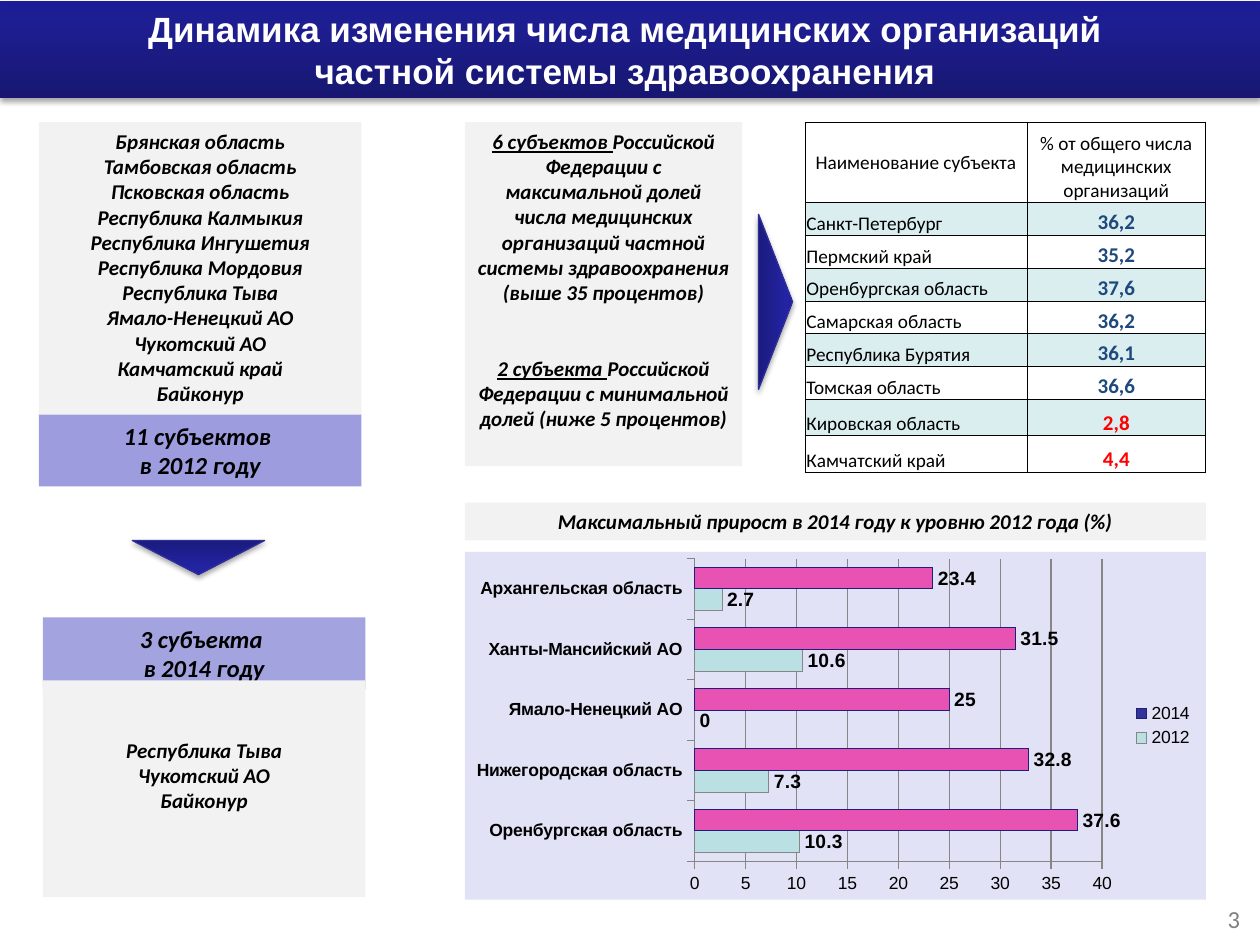
from copy import deepcopy
from pptx import Presentation
from pptx.chart.data import CategoryChartData
from pptx.dml.color import RGBColor
from pptx.enum.chart import XL_CHART_TYPE, XL_LABEL_POSITION, XL_LEGEND_POSITION, XL_TICK_MARK
from pptx.enum.shapes import MSO_SHAPE
from pptx.enum.text import MSO_ANCHOR, PP_ALIGN
from pptx.oxml import parse_xml
from pptx.oxml.ns import nsdecls, qn
from pptx.util import Inches, Pt

THEME = {
    "black": "000000", "white": "FFFFFF", "gray": "F2F2F2", "muted": "808080",
    "lilac": "9C9CDF", "light": "A3A3E0", "band": "DAEDEF", "blue": "1F497D",
    "red": "FF0000", "edge": "2F2F98", "plot": "E2E2F6", "grid": "868686",
    "teal": "BBE0E3", "navy": "333399", "pink": "E852B2", "rim": "1F1F7A",
    "bar": ("171771", "1E1E93", "1C1C96"), "arrow": ("1B1B7E", "2323A3", "2020A6"),
    "title": Pt(20), "head": Pt(14), "body": Pt(12), "cell": Pt(11), "axis": Pt(10),
}
RGB = {key: RGBColor.from_string(val) for key, val in THEME.items() if isinstance(val, str)}


def write(frame, lines, size, color="black", align=PP_ALIGN.CENTER, **style):
    look = {"name": "Calibri", "size": THEME[size], **style}
    frame.word_wrap = True
    for i, line in enumerate(lines):
        par = frame.add_paragraph() if i else frame.paragraphs[0]
        par.alignment = align
        lead, _, rest = line.rpartition("|")
        par.text = lead or rest
        if lead:
            par.runs[0].font.underline = True
            par.add_run().text = rest
        for run in par.runs:
            for key, val in look.items():
                setattr(run.font, key, val)
            run.font.color.rgb = RGB[color]
        for gap in par._p.findall(qn("a:br")):
            gap.append(deepcopy(par.runs[0].font._element))


def block(kind, x, y, w, h, fill, turn=0):
    shape = slide.shapes.add_shape(kind, Inches(x), Inches(y), Inches(w), Inches(h))
    shape.rotation = turn
    shape.shadow.inherit = False
    shape.line.fill.background()
    shape.text_frame.vertical_anchor = MSO_ANCHOR.TOP
    if fill in RGB:
        shape.fill.solid()
        shape.fill.fore_color.rgb = RGB[fill]
        return shape
    stops = "".join(
        f'<a:gs pos="{pos}"><a:srgbClr val="{tone}"/></a:gs>'
        for pos, tone in zip((0, 80000, 100000), THEME[fill]))
    props = shape._element.spPr
    props.find(qn("a:prstGeom")).addnext(parse_xml(
        f'<a:gradFill {nsdecls("a")} rotWithShape="1"><a:gsLst>{stops}</a:gsLst>'
        '<a:lin ang="16200000" scaled="0"/></a:gradFill>'))
    props.find(qn("a:effectLst")).append(parse_xml(
        f'<a:outerShdw {nsdecls("a")} blurRad="39370" dist="22860" dir="5400000" rotWithShape="0">'
        '<a:srgbClr val="000000"><a:alpha val="35000"/></a:srgbClr></a:outerShdw>'))
    return shape


deck = Presentation()
deck.slide_width, deck.slide_height = Inches(10), Inches(7.5)
slide = deck.slides.add_slide(deck.slide_layouts[6])

page = slide.shapes.add_textbox(Inches(7.61), Inches(7.09), Inches(2.33), Inches(0.4))
page.text_frame.vertical_anchor = MSO_ANCHOR.MIDDLE
write(page.text_frame, ["3"], "head", "muted", PP_ALIGN.RIGHT)

title = block(MSO_SHAPE.RECTANGLE, 0, 0.01, 10, 0.77, "bar")
title.text_frame.vertical_anchor = MSO_ANCHOR.MIDDLE
write(title.text_frame,
      ["Динамика изменения числа медицинских организаций \vчастной системы здравоохранения "],
      "title", "white", name="Arial", bold=True)

rows = [
    ("Наименование субъекта", "% от общего числа медицинских организаций"),
    ("Санкт-Петербург", "36,2"), ("Пермский край", "35,2"),
    ("Оренбургская область", "37,6"), ("Самарская область", "36,2"),
    ("Республика Бурятия", "36,1"), ("Томская область", "36,6"),
    ("Кировская область", "2,8"), ("Камчатский край", "4,4"),
]
table = slide.shapes.add_table(len(rows), 2, Inches(6.39), Inches(0.97),
                               Inches(3.18), Inches(2.76)).table
for col, width in zip(table.columns, (1.76, 1.42)):
    col.width = Inches(width)
inset = {"margin_left": Inches(0.01), "margin_right": Inches(0.01),
         "margin_top": Inches(0.01), "margin_bottom": 0}
for r, row in enumerate(rows):
    table.rows[r].height = Inches(0.64 if r == 0 else 0.26 if r < 7 else 0.29)
    for c, label in enumerate(row):
        cell = table.cell(r, c)
        for key, val in inset.items():
            setattr(cell, key, val)
        cell.vertical_anchor = MSO_ANCHOR.BOTTOM if r or c else MSO_ANCHOR.MIDDLE
        props = cell._tc.get_or_add_tcPr()
        for side in ("lnL", "lnR", "lnT", "lnB"):
            props.append(parse_xml(
                f'<a:{side} {nsdecls("a")} w="6350"><a:solidFill>'
                f'<a:srgbClr val="{THEME["black"]}"/></a:solidFill></a:{side}>'))
        cell.fill.solid()
        cell.fill.fore_color.rgb = RGB["band" if r % 2 else "white"]
        if r and c:
            write(cell.text_frame, [label], "body", "blue" if r < 7 else "red", bold=True)
        else:
            write(cell.text_frame, [label], "cell", bold=False,
                  align=PP_ALIGN.LEFT if r else PP_ALIGN.CENTER)

data = CategoryChartData()
data.categories = ["Оренбургская область", "Нижегородская область", "Ямало-Ненецкий АО",
                   "Ханты-Мансийский АО", "Архангельская область"]
data.add_series("2012", (10.3, 7.3, 0, 10.6, 2.7))
data.add_series("2014", (37.6, 32.8, 25, 31.5, 23.4))
chart = slide.shapes.add_chart(XL_CHART_TYPE.BAR_CLUSTERED, Inches(3.69), Inches(4.38),
                               Inches(5.88), Inches(2.76), data).chart
chart.has_title = False
chart.has_legend = True
chart.legend.position = XL_LEGEND_POSITION.RIGHT
chart.legend.include_in_layout = False
for key, val in {"name": "Arial", "size": THEME["axis"]}.items():
    setattr(chart.font, key, val)
chart.font.color.rgb = RGB["black"]
chart._chartSpace.find(qn("c:txPr")).addprevious(parse_xml(
    f'<c:spPr {nsdecls("c", "a")}><a:solidFill><a:srgbClr val="{THEME["plot"]}"/>'
    '</a:solidFill><a:ln><a:noFill/></a:ln></c:spPr>'))
area = chart._chartSpace.chart.plotArea
for old in area.findall(qn("c:layout")):
    area.remove(old)
spots = "".join(f'<c:{key} val="{val}"/>' for key, val in
                {"layoutTarget": "inner", "xMode": "edge", "yMode": "edge",
                 "x": 0.31, "y": 0.02, "w": 0.55, "h": 0.87}.items())
area.insert(0, parse_xml(
    f'<c:layout {nsdecls("c")}><c:manualLayout>{spots}</c:manualLayout></c:layout>'))
plot = chart.plots[0]
for key, val in {"gap_width": 80, "overlap": 0, "vary_by_categories": False}.items():
    setattr(plot, key, val)
for axis in (chart.category_axis, chart.value_axis):
    axis.major_tick_mark = XL_TICK_MARK.OUTSIDE
    axis.format.line.color.rgb = RGB["grid"]
chart.category_axis.tick_labels.font.bold = True
for key, val in {"minimum_scale": 0, "maximum_scale": 40, "major_unit": 5,
                 "has_major_gridlines": True}.items():
    setattr(chart.value_axis, key, val)
chart.value_axis.major_gridlines.format.line.color.rgb = RGB["grid"]
for series, fill, edge in zip(plot.series, ("teal", "navy"), ("grid", "rim")):
    marks = [series]
    if fill == "navy":
        marks += [series.points[i] for i in range(5)]
    for mark in marks:
        mark.format.fill.solid()
        mark.format.fill.fore_color.rgb = RGB[fill if mark is series else "pink"]
        mark.format.line.color.rgb = RGB[edge]
    labels = series.data_labels
    labels.show_value = True
    labels.position = XL_LABEL_POSITION.OUTSIDE_END
    for key, val in {"size": THEME["cell"], "bold": True}.items():
        setattr(labels.font, key, val)

panels = [
    (0.31, 0.97, 2.56, 2.32, "gray", "body",
     ["Брянская область", "Тамбовская область", "Псковская область", "Республика Калмыкия",
      "Республика Ингушетия", "Республика Мордовия", "Республика Тыва", "Ямало-Ненецкий АО",
      "Чукотский АО", "Камчатский край", "Байконур"]),
    (3.69, 0.97, 2.2, 2.73, "gray", "body",
     ["6 субъектов |Российской Федерации с максимальной долей числа медицинских организаций "
      "частной системы здравоохранения (выше 35 процентов)",
      "2 субъекта |Российской Федерации с минимальной долей (ниже 5 процентов)"]),
    (3.69, 3.99, 5.88, 0.3, "gray", "body",
     ["Максимальный прирост в 2014 году к уровню 2012 года (%)"]),
    (0.31, 3.29, 2.56, 0.57, "lilac", "head", ["11 субъектов \vв 2012 году"]),
    (0.34, 4.9, 2.56, 0.57, "light", "head", ["3 субъекта \vв 2014 году"]),
    (0.34, 5.4, 2.56, 1.72, "gray", "body", ["Республика Тыва", "Чукотский АО", "Байконур"]),
]
frames = []
for x, y, w, h, fill, size, lines in panels:
    frame = block(MSO_SHAPE.RECTANGLE, x, y, w, h, fill).text_frame
    write(frame, lines, size, bold=True, italic=True)
    frames.append(frame)
frames[1].paragraphs[1].space_before = Pt(29)
frames[-1].margin_top = Inches(0.45)

for x, y, w, turn in ((1.05, 4.29, 1.05, 180), (5.46, 2.26, 1.39, 90)):
    arrow = block(MSO_SHAPE.ISOSCELES_TRIANGLE, x, y, w, 0.27, "arrow", turn)
    arrow.line.color.rgb = RGB["edge"]
    arrow.line.width = Pt(0.75)

deck.save("out.pptx")
